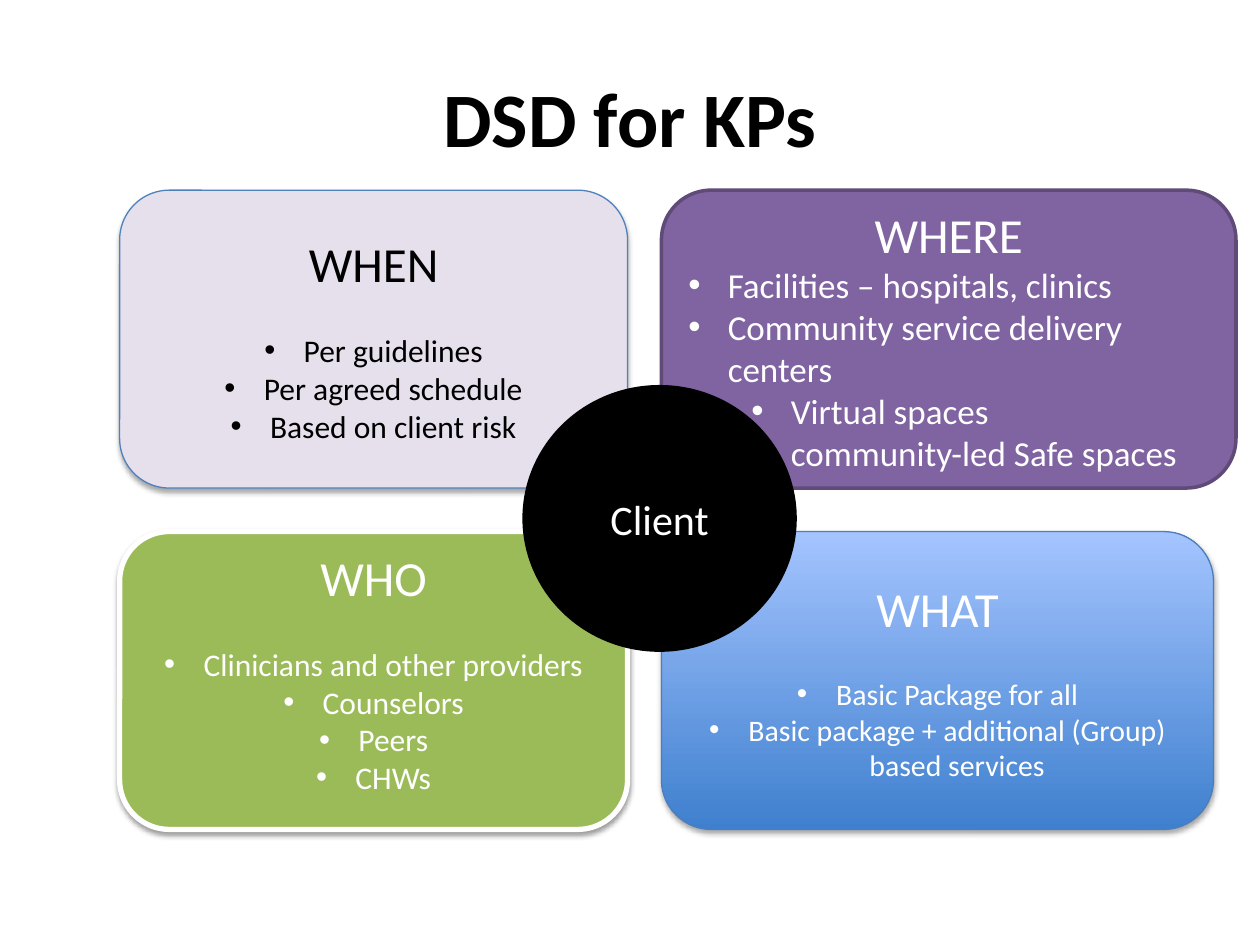
from dataclasses import dataclass

from lxml.etree import SubElement
from pptx import Presentation
from pptx.dml.color import RGBColor
from pptx.enum.shapes import MSO_SHAPE
from pptx.enum.text import MSO_ANCHOR, PP_ALIGN
from pptx.oxml.ns import qn
from pptx.util import Pt


@dataclass(frozen=True)
class Theme:
    font: str = "Calibri"
    black: str = "000000"
    white: str = "FFFFFF"
    lavender: str = "E6E0EC"
    blue_line: str = "4F81BD"
    purple: str = "8064A2"
    purple_line: str = "5F4A78"
    green: str = "9BBB59"
    gradient: tuple = ("3F80CE", "A4C4FF")
    gradient_line: str = "4B7EBC"
    title_size: float = 44
    heading_size: float = 28
    client_size: float = 24


THEME = Theme()
LEFT, RIGHT = 68.4, 378
TOP, BOTTOM = 108.7, 303.8
CARD_HEIGHT = 170.2
HEADING_GAP = 22
BULLET_INDENT, LEVEL_STEP = 22.5, 36


def rgb(code):
    return RGBColor.from_string(code)


def format_paragraph(para, size, color, align=PP_ALIGN.CENTER, bold=False):
    para.alignment = align
    for span in para.runs:
        span.font.name = THEME.font
        span.font.size = Pt(size)
        span.font.bold = bold
        span.font.color.rgb = rgb(color)


def add_bullet(para, level):
    para.level = level
    properties = para._p.get_or_add_pPr()
    properties.set("marL", str(Pt(BULLET_INDENT + LEVEL_STEP * level)))
    properties.set("indent", str(-Pt(BULLET_INDENT)))
    SubElement(properties, qn("a:buFont"), typeface="Arial")
    SubElement(properties, qn("a:buChar"), char="•")


def add_shadow(shape, opacity, distance):
    """Drop a soft black shadow straight down; opacity is in percent."""
    effects = shape._element.spPr.find(qn("a:effectLst"))
    shadow = SubElement(effects, qn("a:outerShdw"), blurRad=str(Pt(3.1)),
                        dist=str(Pt(distance)), dir="5400000", rotWithShape="0")
    color = SubElement(shadow, qn("a:srgbClr"), val=THEME.black)
    SubElement(color, qn("a:alpha"), val=str(opacity * 1000))


def fill_shape(shape, fill):
    """Fill with one colour, or upwards with a pair of colours."""
    if isinstance(fill, str):
        shape.fill.solid()
        shape.fill.fore_color.rgb = rgb(fill)
        return
    shape.fill.gradient()
    shape.fill.gradient_angle = 90
    for stop, code in zip(shape.fill.gradient_stops, fill):
        stop.color.rgb = rgb(code)


def add_block(page, kind, bounds, fill, line, line_width):
    shape = page.shapes.add_shape(kind, *map(Pt, bounds))
    fill_shape(shape, fill)
    shape.line.color.rgb = rgb(line)
    shape.line.width = Pt(line_width)
    shape.shadow.inherit = False
    shape.text_frame.word_wrap = True
    shape.text_frame.vertical_anchor = MSO_ANCHOR.MIDDLE
    return shape


def add_card(page, bounds, fill, line, line_width, heading, bullets, size,
             color=THEME.white, align=PP_ALIGN.CENTER, gap=HEADING_GAP):
    """Add a rounded card; bullets are (text, level) pairs."""
    card = add_block(page, MSO_SHAPE.ROUNDED_RECTANGLE, bounds, fill, line, line_width)
    frame = card.text_frame
    frame.text = heading
    frame.paragraphs[0].space_after = Pt(gap)
    format_paragraph(frame.paragraphs[0], THEME.heading_size, color)
    for text, level in bullets:
        para = frame.add_paragraph()
        para.text = text
        format_paragraph(para, size, color, align)
        add_bullet(para, level)
    return card


def add_title(page, text):
    title = page.shapes.title
    title.left, title.top, title.width, title.height = map(Pt, (36, 21.6, 648, 90))
    title.text_frame.text = text
    title.text_frame.vertical_anchor = MSO_ANCHOR.MIDDLE
    format_paragraph(title.text_frame.paragraphs[0], THEME.title_size,
                     THEME.black, bold=True)


def add_client(page):
    circle = add_block(page, MSO_SHAPE.OVAL, (299.5, 221, 154.8, 150.5),
                       THEME.black, THEME.black, 2)
    circle.text_frame.text = "Client"
    format_paragraph(circle.text_frame.paragraphs[0], THEME.client_size, THEME.white)


def main():
    deck = Presentation()
    deck.slide_width, deck.slide_height = Pt(720), Pt(540)
    page = deck.slides.add_slide(deck.slide_layouts[5])
    add_title(page, "DSD for KPs")

    when = add_card(
        page, (LEFT, TOP, 290.2, CARD_HEIGHT), THEME.lavender, THEME.blue_line, 0.75,
        "WHEN", [("Per guidelines", 0), ("Per agreed schedule", 0),
                 ("Based on client risk", 0)], 18, color=THEME.black)
    add_shadow(when, 35, 1.8)

    add_card(
        page, (RIGHT, TOP, 328.3, CARD_HEIGHT), THEME.purple, THEME.purple_line, 2,
        "WHERE", [("Facilities – hospitals, clinics", 0),
                  ("Community service delivery centers", 0),
                  ("Virtual spaces", 1), ("community-led Safe spaces", 1)],
        20, align=PP_ALIGN.LEFT, gap=0)

    who = add_card(
        page, (LEFT, BOTTOM, 290.2, CARD_HEIGHT), THEME.green, THEME.white, 3,
        "WHO", [("Clinicians and other providers", 0), ("Counselors", 0),
                ("Peers", 0), ("CHWs", 0)], 18)
    who.text_frame.margin_bottom = Pt(13.6)
    add_shadow(who, 38, 1.6)

    what = add_card(
        page, (RIGHT, BOTTOM, 315.4, CARD_HEIGHT), THEME.gradient,
        THEME.gradient_line, 0.75,
        "WHAT", [("Basic Package for all", 0),
                 ("Basic package + additional (Group) based services", 0)], 17)
    add_shadow(what, 35, 1.8)

    add_client(page)
    deck.save("out.pptx")


if __name__ == "__main__":
    main()
